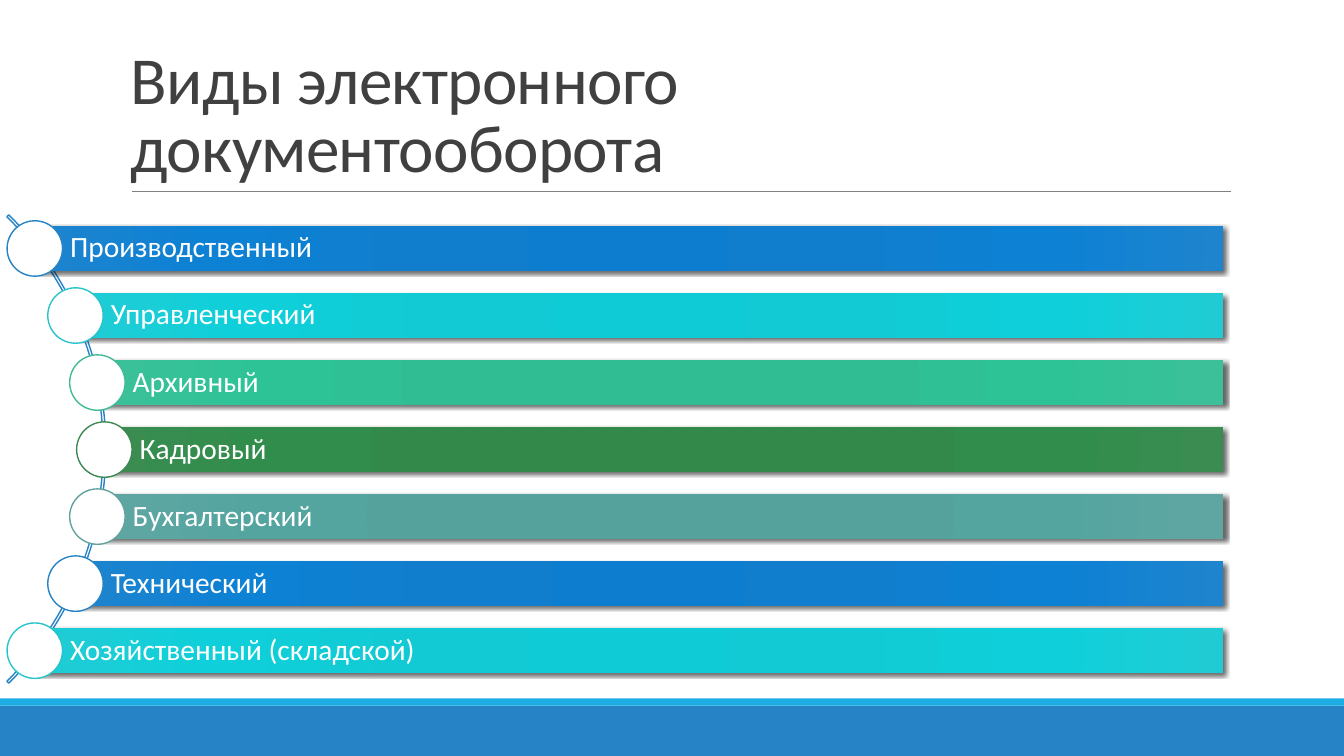
from math import sqrt

from lxml import etree
from pptx import Presentation
from pptx.dml.color import RGBColor
from pptx.enum.shapes import MSO_CONNECTOR, MSO_SHAPE
from pptx.enum.text import MSO_ANCHOR, PP_ALIGN
from pptx.oxml.ns import qn
from pptx.util import Inches, Pt

RECTANGLE, OVAL, BLOCK_ARC = MSO_SHAPE.RECTANGLE, MSO_SHAPE.OVAL, MSO_SHAPE.BLOCK_ARC
STRAIGHT = MSO_CONNECTOR.STRAIGHT
BOTTOM, MIDDLE, LEFT = MSO_ANCHOR.BOTTOM, MSO_ANCHOR.MIDDLE, PP_ALIGN.LEFT

TITLE = "Виды электронного документооборота"
KINDS = [
    "Производственный",
    "Управленческий",
    "Архивный",
    "Кадровый",
    "Бухгалтерский",
    "Технический",
    "Хозяйственный (складской)",
]
# Circle outline, then the bar's gradient colours; the list repeats after its end
PALETTE = [
    ("2683C6", ("0D7ECF", "117ECD", "0D81D4", "1E84CE")),
    ("28C4CC", ("0ECBD5", "12CAD3", "0FD0DA", "20CBD4")),
    ("42BA97", ("2DBE94", "30BD94", "2EC397", "3CC09A")),
    ("3E8853", ("2F8949", "32894A", "318D4B", "3A8C51")),
    ("62A39F", ("52A19C", "55A19C", "54A5A0", "5FA6A2")),
]
GRADIENT_STOPS = (0, 34, 70, 100)
BLUE, LIGHT_BLUE, WHITE, GREY, DARK = "2683C6", "1CADE4", "FFFFFF", "808080", "404040"
FONT = "Calibri"

WIDTH, HEIGHT = 13.33, 7.5
FOOTER_TOP, STRIPE_HEIGHT = 7, 0.07
ROW_CENTER, ROW_PITCH = 4.46, 0.665
BAR_HEIGHT, BAR_RIGHT, CIRCLE_SIZE = 0.44, 12.13, 0.55
# The circles sit on a curve of this radius around a point left of the slide
CURVE_CENTER, CURVE_RADIUS = -2.195, 3.23
ARC_LEFT, ARC_TOP, ARC_SIZE = -5.52, 1.17, 6.57


def color(hex_string):
    return RGBColor.from_string(hex_string)


def add_shape(slide, kind, left, top, width, height, fill=None, line=None):
    shape = slide.shapes.add_shape(
        kind, Inches(left), Inches(top), Inches(width), Inches(height))
    shape.shadow.inherit = False
    if fill:
        shape.fill.solid()
        shape.fill.fore_color.rgb = color(fill)
    else:
        shape.fill.background()
    if line:
        shape.line.color.rgb = color(line)
        shape.line.width = Pt(1)
    else:
        shape.line.fill.background()
    return shape


def add_text(shape, text, size, font_color, anchor, line_spacing, insets):
    frame = shape.text_frame
    frame.text = text
    frame.word_wrap = True
    frame.vertical_anchor = anchor
    (frame.margin_left, frame.margin_top,
     frame.margin_right, frame.margin_bottom) = map(Inches, insets)
    paragraph = frame.paragraphs[0]
    paragraph.alignment = LEFT
    paragraph.line_spacing = line_spacing
    run = paragraph.runs[0]
    run.font.name = FONT
    run.font.size = Pt(size)
    run.font.color.rgb = color(font_color)
    return run


def add_child(parent, tag, **attributes):
    child = etree.SubElement(parent, qn(tag))
    for name, value in attributes.items():
        child.set(name, str(value))
    return child


def set_radial_gradient(shape, colors):
    properties = shape._element.spPr
    gradient = etree.Element(qn("a:gradFill"), rotWithShape="1")
    stops = add_child(gradient, "a:gsLst")
    for position, stop_color in zip(GRADIENT_STOPS, colors):
        stop = add_child(stops, "a:gs", pos=position * 1000)
        add_child(stop, "a:srgbClr", val=stop_color)
    circle = add_child(gradient, "a:path", path="circle")
    add_child(circle, "a:fillToRect", l=100000, t=100000, r=100000, b=100000)
    properties.replace(properties.find(qn("a:noFill")), gradient)


def add_shadow(shape):
    effects = shape._element.spPr.find(qn("a:effectLst"))
    shadow = add_child(effects, "a:outerShdw", blurRad=Pt(3), dist=Pt(2),
                       dir=45 * 60000, algn="tl", rotWithShape=0)
    black = add_child(shadow, "a:srgbClr", val="000000")
    add_child(black, "a:alpha", val=60000)


def add_frame(slide):
    """Footer bands, title and the rule below it."""
    add_shape(slide, RECTANGLE, 0, FOOTER_TOP, WIDTH, HEIGHT - FOOTER_TOP, BLUE)
    add_shape(slide, RECTANGLE, 0, FOOTER_TOP - STRIPE_HEIGHT, WIDTH, STRIPE_HEIGHT,
              LIGHT_BLUE)
    rule = slide.shapes.add_connector(
        STRAIGHT, Inches(1.31), Inches(1.9), Inches(12.21), Inches(1.9))
    rule.line.color.rgb = color(GREY)
    rule.line.width = Pt(0.5)
    add_child(rule._element.spPr, "a:effectLst")
    title = slide.shapes.add_textbox(Inches(1.2), Inches(0.31), Inches(11), Inches(1.59))
    run = add_text(title, TITLE, 48, DARK, BOTTOM, 0.85, (0.1, 0.05, 0.1, 0.05))
    run.font._element.set("spc", "-50")


def add_row(slide, index, text):
    outline, gradient = PALETTE[index % len(PALETTE)]
    offset = (index - (len(KINDS) - 1) / 2) * ROW_PITCH
    center_x = CURVE_CENTER + sqrt(CURVE_RADIUS ** 2 - offset ** 2)
    center_y = ROW_CENTER + offset
    bar = add_shape(slide, RECTANGLE, center_x, center_y - BAR_HEIGHT / 2,
                    BAR_RIGHT - center_x, BAR_HEIGHT)
    set_radial_gradient(bar, gradient)
    add_shadow(bar)
    add_text(bar, text, 21, WHITE, MIDDLE, 0.9, (0.35, 0.06, 0.06, 0.06))
    add_shape(slide, OVAL, center_x - CIRCLE_SIZE / 2, center_y - CIRCLE_SIZE / 2,
              CIRCLE_SIZE, CIRCLE_SIZE, WHITE, outline)


def main():
    presentation = Presentation()
    presentation.slide_width, presentation.slide_height = Inches(WIDTH), Inches(HEIGHT)
    slide = presentation.slides.add_slide(presentation.slide_layouts[6])
    add_frame(slide)
    arc = add_shape(slide, BLOCK_ARC, ARC_LEFT, ARC_TOP, ARC_SIZE, ARC_SIZE, line=BLUE)
    for index, value in enumerate((189, 27, 0.004)):
        arc.adjustments[index] = value
    for index, text in enumerate(KINDS):
        add_row(slide, index, text)
    presentation.save("out.pptx")


if __name__ == "__main__":
    main()
